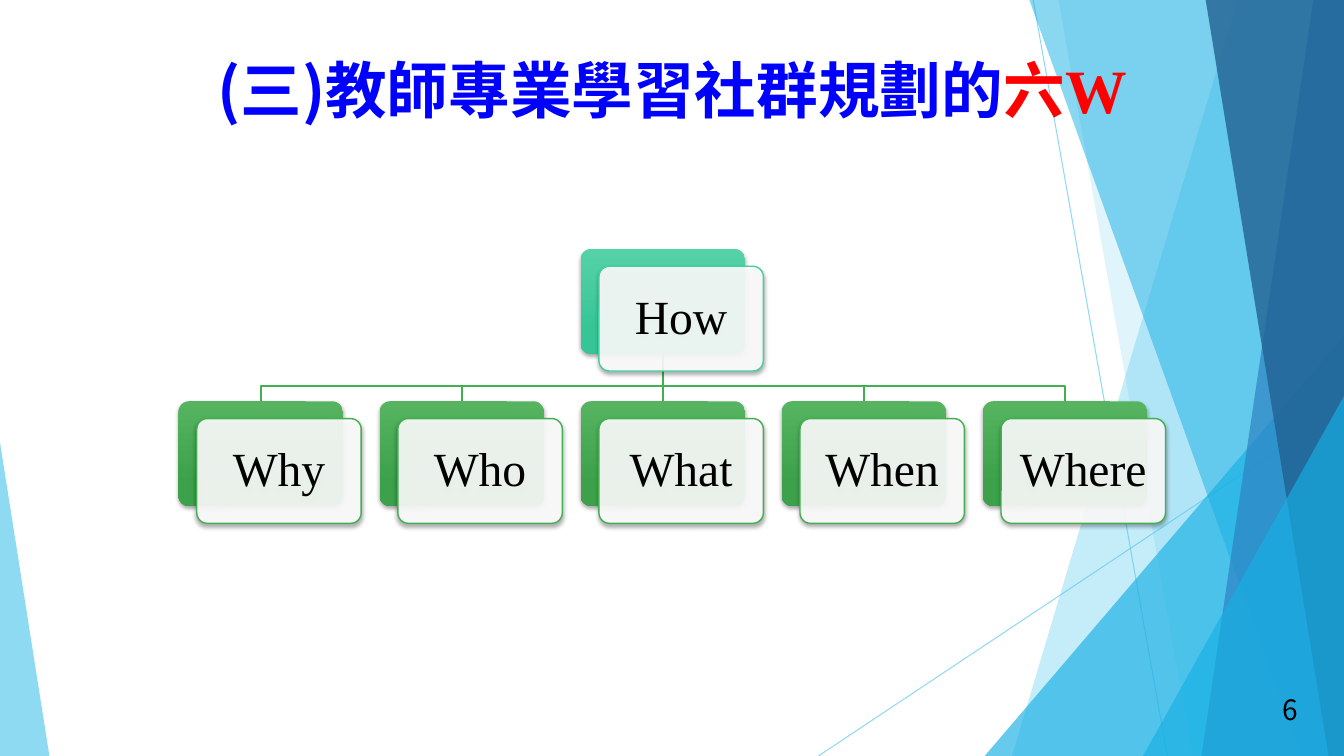
import pptx
import pptx.util
import pptx.dml.color
import pptx.enum.shapes
import pptx.enum.text
import pptx.oxml
import pptx.oxml.ns
import pptx.oxml.xmlchemy

Pt = pptx.util.Pt
SHAPE = pptx.enum.shapes.MSO_SHAPE
CONNECTOR = pptx.enum.shapes.MSO_CONNECTOR
MIDDLE = pptx.enum.text.MSO_ANCHOR.MIDDLE
CENTER = pptx.enum.text.PP_ALIGN.CENTER
qn = pptx.oxml.ns.qn
new_element = pptx.oxml.xmlchemy.OxmlElement

SLIDE_W, SLIDE_H = 960, 540
SANS, SERIF = "Noto Sans CJK SC", "Times New Roman"
GREEN = "42B051"
CARD_W, CARD_H = 117.4, 74.8
SHIFT_X, SHIFT_Y = 13.1, 12.4
ELBOW_RISE = 10.8


def color(hex_value):
    return pptx.dml.color.RGBColor.from_string(hex_value)


def apply(target, values):
    for key, value in values.items():
        setattr(target, key, value)


def paint(fill, hex_value, opacity=100):
    fill.solid()
    fill.fore_color.rgb = color(hex_value)
    if opacity < 100:
        alpha = new_element("a:alpha")
        alpha.set("val", str(opacity * 1000))
        fill._xPr.find(".//" + qn("a:srgbClr")).append(alpha)


def outline(shape, hex_value, weight, opacity=100):
    paint(shape.line.fill, hex_value, opacity)
    shape.line.width = Pt(weight)


def add_preset(slide, preset, box, adjustment):
    shape = slide.shapes.add_shape(preset, *map(Pt, box))
    shape.adjustments[0] = adjustment
    shape.shadow.inherit = False
    return shape


def add_outline(slide, points, close):
    corners = [(Pt(x), Pt(y)) for x, y in points]
    builder = slide.shapes.build_freeform(*corners[0], scale=1.0)
    builder.add_line_segments(corners[1:], close=close)
    shape = builder.convert_to_shape()
    shape.shadow.inherit = False
    return shape


def add_straight(slide, start, end, hex_value, weight, opacity=100):
    link = slide.shapes.add_connector(CONNECTOR.STRAIGHT, *map(Pt, start + end))
    link._element.spPr.append(new_element("a:effectLst"))
    outline(link, hex_value, weight, opacity)
    return link


def cast_shadow(shape):
    shadow = pptx.oxml.parse_xml(
        f'<a:outerShdw {pptx.oxml.ns.nsdecls("a")} blurRad="38100" dist="25400" '
        'dir="5400000" rotWithShape="0"><a:srgbClr val="000000">'
        '<a:alpha val="35000"/></a:srgbClr></a:outerShdw>')
    shape._element.spPr.find(qn("a:effectLst")).append(shadow)


def write(paragraph, text, size, font_name, hex_value, bold=False):
    run = paragraph.add_run()
    run.text = text
    apply(run.font, {"size": Pt(size), "name": font_name, "bold": bold})
    run.font.color.rgb = color(hex_value)
    east_asian = new_element("a:ea")
    east_asian.set("typeface", SANS)
    run.font._element.find(qn("a:latin")).addnext(east_asian)


def draw_facets(slide, left, top, width, height):
    right, bottom = left + width, top + height
    for start, end in (((738, 0), (833.8, 540)), ((960, 290.2), (584.6, 540))):
        add_straight(slide, (left + start[0], top + start[1]),
                     (left + end[0], top + end[1]), "5FCBEF", 0.75, 70)
    facets = [
        ("shard", (884.2, 722.9), "5FCBEF", 36),
        ("shard", (756, 851.8), "5FCBEF", 20),
        ("triangle", (703.4, 256.6, 300.2, 1), "17B0E4", 66),
        ("shard", (735.1, 929.5), "17B0E4", 50),
        ("shard", (938.2, 858.2), "2E83C3", 70),
        ("shard", (861.1, 949), "226292", 80),
        ("triangle", (816.5, 143.5, 257, 1), "17B0E4", 66),
        ("triangle", (0, 35.3, 223.9, 0), "5FCBEF", 70),
    ]
    for kind, measures, hex_value, opacity in facets:
        if kind == "shard":
            top_x, bottom_x = measures
            facet = add_outline(slide, [(left + top_x, top - 0.6), (right, top - 0.6),
                                        (right, bottom), (left + bottom_x, bottom)], True)
        else:
            x, base, rise, apex = measures
            facet = add_preset(slide, SHAPE.ISOSCELES_TRIANGLE,
                               (left + x, bottom - rise, base, rise), apex)
        paint(facet.fill, hex_value, opacity)
        facet.line.fill.background()


def write_heading(slide, left, top, width, height):
    heading = slide.shapes.title
    apply(heading, {"left": Pt(left), "top": Pt(top),
                    "width": Pt(width), "height": Pt(height)})
    apply(heading.text_frame, {"word_wrap": True, "vertical_anchor": MIDDLE,
                               "auto_size": pptx.enum.text.MSO_AUTO_SIZE.NONE})
    line = heading.text_frame.paragraphs[0]
    line.alignment = CENTER
    write(line, "(三)教師專業學習社群規劃的", 44, SANS, "0000FF", True)
    write(line, "六W", 44, SERIF, "FF0000", True)


def add_backing(slide, x, y, shades):
    backing = add_preset(slide, SHAPE.ROUNDED_RECTANGLE, (x, y, CARD_W, CARD_H), 0.1)
    backing.fill.gradient()
    backing.fill.gradient_angle = 270
    for stop, position, shade in zip(backing.fill.gradient_stops, (0, 0.78), shades):
        stop.position = position
        stop.color.rgb = color(shade)
    backing.line.fill.background()
    cast_shadow(backing)
    return backing


def add_card(slide, x, y, word, border):
    card = add_preset(slide, SHAPE.ROUNDED_RECTANGLE,
                      (x + SHIFT_X, y + SHIFT_Y, CARD_W, CARD_H), 0.1)
    paint(card.fill, "FFFFFF", 90)
    outline(card, border, 1)
    cast_shadow(card)
    margins = {f"margin_{side}": Pt(10) for side in ("left", "right", "top", "bottom")}
    apply(card.text_frame, {"word_wrap": True, "vertical_anchor": MIDDLE, **margins})
    label = card.text_frame.paragraphs[0]
    apply(label, {"alignment": CENTER, "line_spacing": 0.9})
    write(label, word, 34, SERIF, "000000")


def draw_question_tree(slide, left, top, width, height):
    questions = ["Why", "Who", "What", "When", "Where"]
    pitch = (width - CARD_W - SHIFT_X) / (len(questions) - 1)
    question_xs = [left + pitch * index for index in range(len(questions))]
    middle = len(questions) // 2
    how_x = question_xs[middle]
    question_y = top + height - CARD_H - SHIFT_Y

    how = add_backing(slide, how_x, top, ("56D2A7", "36C596"))
    backings = [add_backing(slide, x, question_y, ("56B461", "3CA14A"))
                for x in question_xs]

    trunk = (how_x + CARD_W / 2, top + CARD_H)
    elbow_y = question_y - ELBOW_RISE
    for index, x in enumerate(question_xs):
        tip = (x + CARD_W / 2, question_y)
        if index == middle:
            link = add_straight(slide, trunk, tip, GREEN, 1.5)
            link.begin_connect(how, 2)
            link.end_connect(backings[index], 0)
        else:
            branch = add_outline(slide, [trunk, (trunk[0], elbow_y),
                                         (tip[0], elbow_y), tip], False)
            branch.fill.background()
            outline(branch, GREEN, 1.5)

    add_card(slide, how_x, top, "How", "42D0A2")
    for x, word in zip(question_xs, questions):
        add_card(slide, x, question_y, word, GREEN)


def write_page_number(slide, left, top, width, height):
    page_number = slide.shapes.add_textbox(*map(Pt, (left, top, width, height)))
    apply(page_number.text_frame, {"word_wrap": True, "vertical_anchor": MIDDLE})
    line = page_number.text_frame.paragraphs[0]
    line.alignment = CENTER
    write(line, "6", 20, SANS, "000000")


def main():
    deck = pptx.Presentation()
    apply(deck, {"slide_width": Pt(SLIDE_W), "slide_height": Pt(SLIDE_H)})
    slide = deck.slides.add_slide(deck.slide_layouts.get_by_name("Title Only"))
    paint(slide.background.fill, "FFFFFF")
    draw_facets(slide, 0, 0, SLIDE_W, SLIDE_H)
    slide.shapes._spTree.append(slide.shapes.title._element)
    write_heading(slide, 0, 31.7, SLIDE_W, 64)
    draw_question_tree(slide, 127.5, 177.8, 705, 196)
    write_page_number(slide, 897, 489, 49.7, 36)
    deck.save("out.pptx")


if __name__ == "__main__":
    main()
